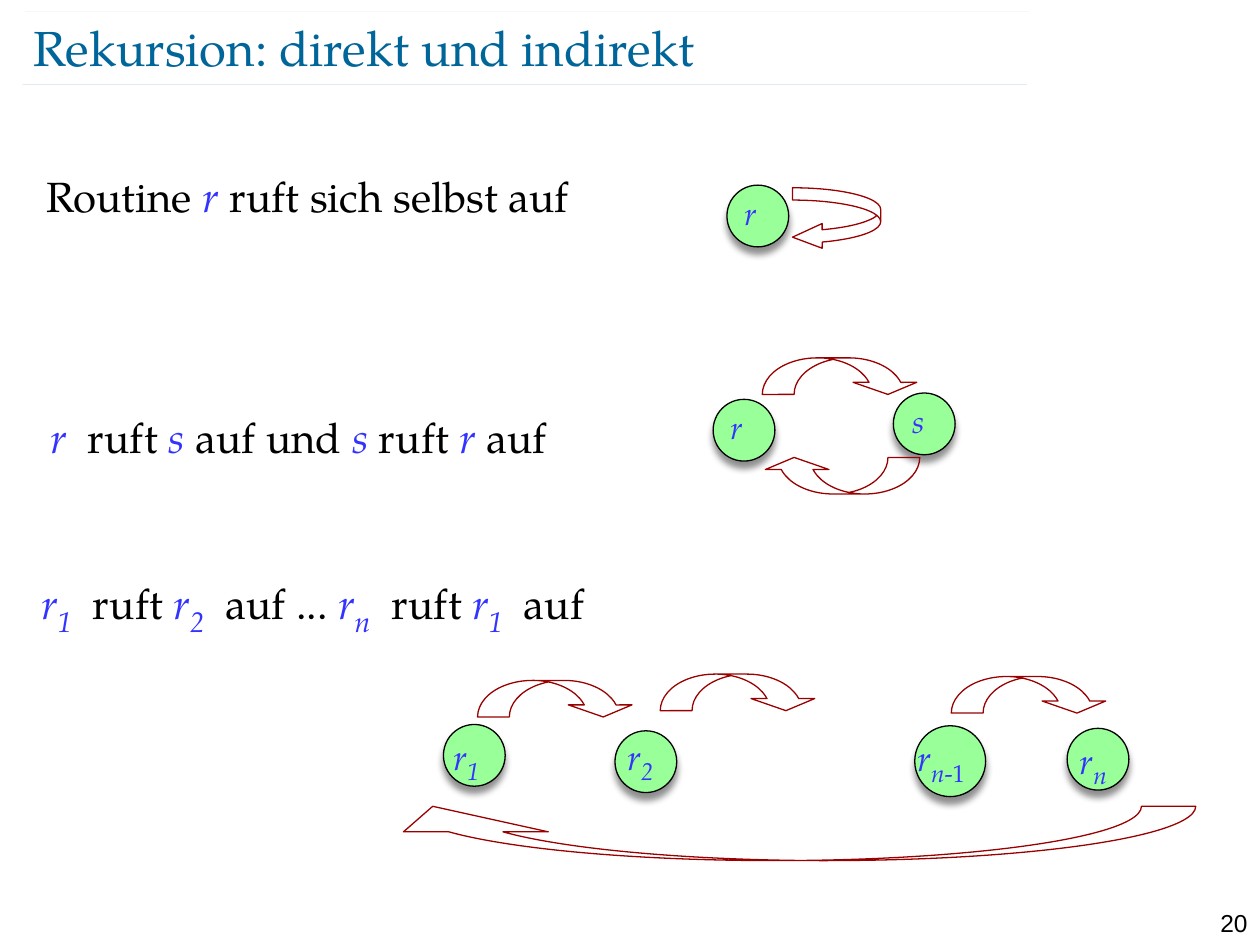
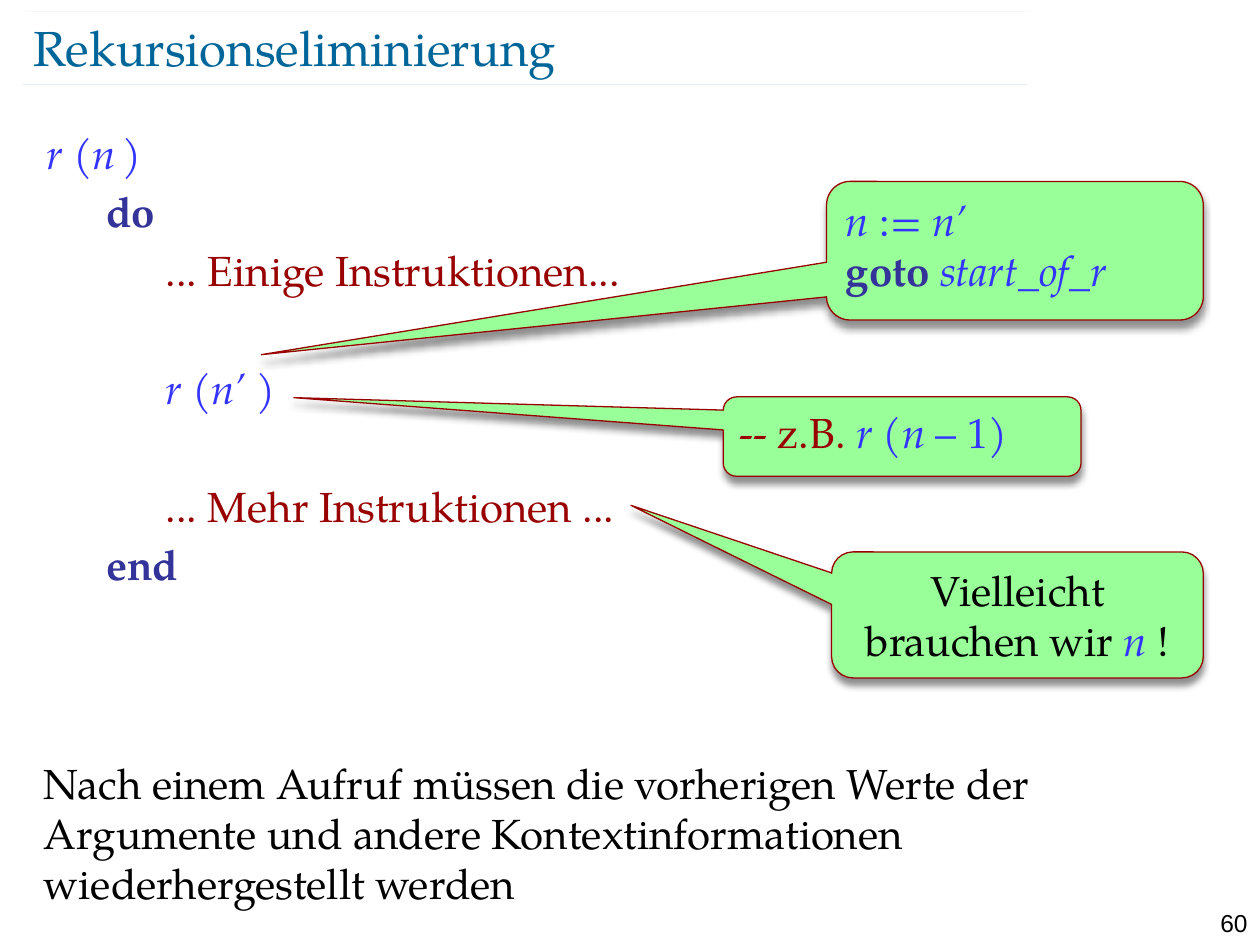
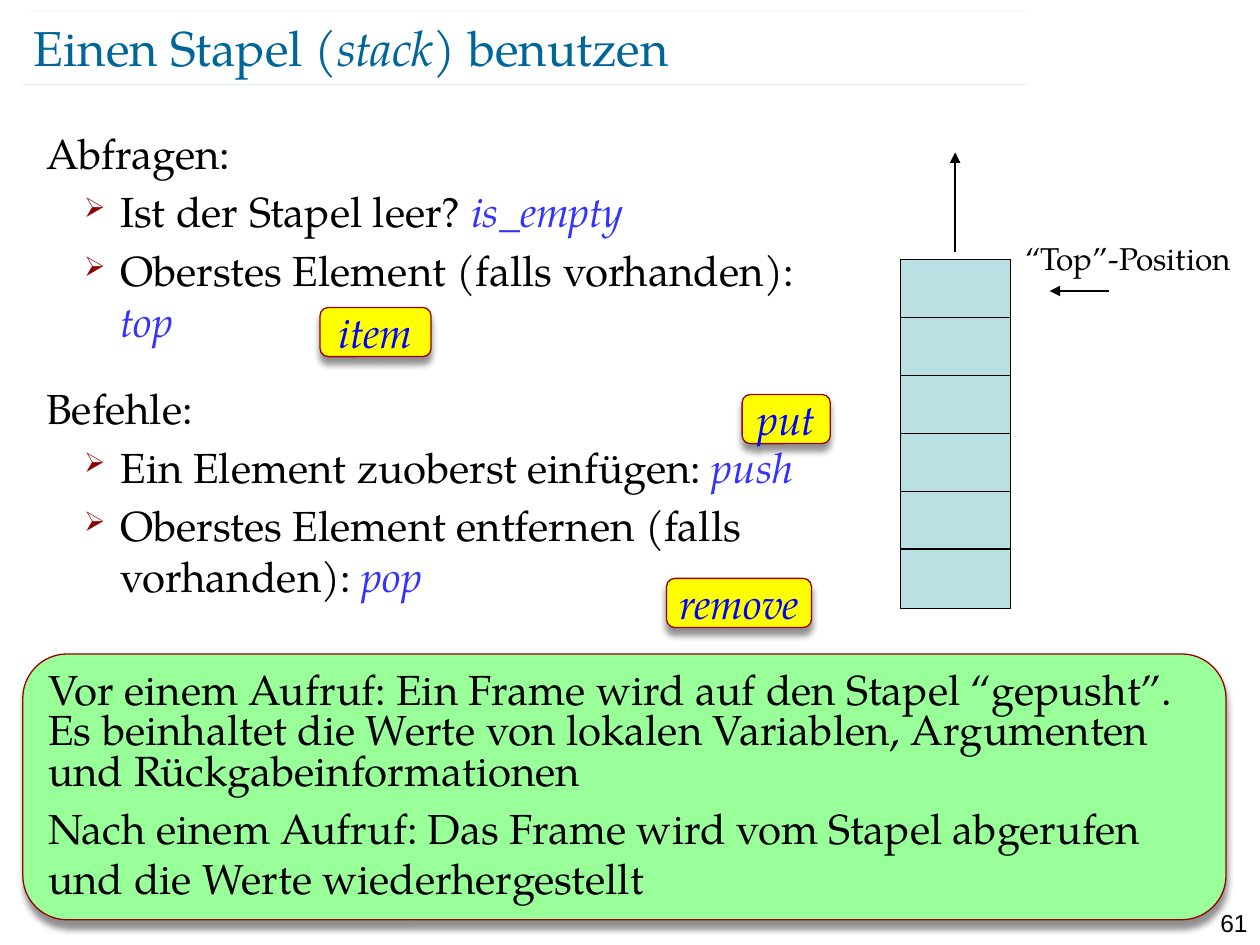
from dataclasses import dataclass, field

from lxml import etree
from pptx import Presentation
from pptx import util as u
from pptx.dml import color
from pptx.enum import shapes, text
from pptx.oxml import ns

# ---- Content: a run is (text, style), a paragraph is a dict, places are points ----

GAP = (" ", "gap")  # widened space between a routine name and its verb

RECURSION = {
    "title": [("Rekursion: direkt und indirekt", "title")],
    "number": 20,
    "statements": [
        ((19.4, 93.6, 365, 43.9),
         [("Routine ", "text"), ("r", "name"), (" ruft sich selbst auf", "text")]),
        ((21.6, 231.8, 362.9, 60.5),
         [("r", "name"), GAP, ("ruft ", "text"), ("s", "name"), (" auf und ", "text"),
          ("s", "name"), (" ruft ", "text"), ("r ", "name"), ("auf", "text")]),
        ((16.6, 322.6, 378.7, 49),
         [("r", "name"), ("1", "index"), GAP, ("ruft ", "text"),
          ("r", "name"), ("2", "index"), GAP, ("auf ... ", "text"),
          ("r", "name"), ("n", "index"), GAP, ("ruft ", "text"),
          ("r", "name"), ("1", "index"), GAP, ("auf", "text")]),
    ],
    # (circle left, top, diameter), (label left, top, width), label size, label
    "routines": [
        ((415.4, 105.8, 35.3), (425.5, 110.9, 18.7), 18, [("r", "name")]),
        ((407.5, 228.2, 35.3), (417.6, 233.3, 18.7), 18, [("r", "name")]),
        ((510.5, 224.6, 35.3), (521.3, 229.7, 18.7), 18, [("s", "name")]),
        ((253.4, 414, 35.3), (259.2, 416.2, 23.8), 20, [("r", "name"), ("1", "index")]),
        ((351.4, 417.6, 35.3), (358.6, 416.2, 23.8), 20, [("r", "name"), ("2", "index")]),
        ((522.7, 414.7, 40.5), (524.2, 416.9, 39.6), 20,
         [("r", "name"), ("n", "index"), ("-1", "index_upright")]),
        ((609.8, 416.2, 35.3), (617, 418.3, 39.6), 20, [("r", "name"), ("n", "index")]),
    ],
    "self_call": (452.9, 107.3, 50.4, 35.3),
    "calls": [(435.6, 204.5), (272.9, 388.8), (543.6, 386.6), (377.3, 385.2)],
    "call_back": (435.6, 261.4),
    "call_to_first": (205.9, 460.8, 477.4, 31),
}

ELIMINATION = {
    "title": [("Rekursionseliminierung", "title")],
    "number": 60,
    "code_box": (19.4, 69.1, 676.8, 444.2),
    "code": [
        {"runs": [("r", "name"), (" (", "code"), ("n", "name"), (" ", "tight"), (")", "code")]},
        {"runs": [("do", "keyword")], "depth": 1},
        {"runs": [("... Einige Instruktionen...", "comment")], "depth": 2},
        {"runs": [("r", "name"), (" (", "code"), ("n’ ", "name"), (")", "code")],
         "depth": 2, "before": 38.5},
        {"runs": [("... Mehr Instruktionen ...", "comment")], "depth": 2, "before": 38.5},
        {"runs": [("end", "keyword")], "depth": 1},
    ],
    # box, pointer tip, alignment, paragraphs
    "callouts": [
        ((475.2, 315.4, 212.4, 72), (-1.04, -0.87), "CENTER",
         [{"runs": [("Vielleicht brauchen wir ", "text"), ("n ", "name"), ("!", "text")]}]),
        ((472.3, 103.7, 215.3, 79.2), (-2, 0.75), "LEFT",
         [{"runs": [("n ", "name"), (":= ", "code"), ("n’", "name")]},
          {"runs": [("goto ", "keyword"), ("start_of_r", "name")], "before": 0}]),
        ((413.3, 226.8, 204.5, 45.4), (-1.7, -0.49), "LEFT",
         [{"runs": [("-- z.B. ", "comment"), ("r ", "name"), ("(", "code"),
                    ("n ", "name"), ("– 1)", "code")]}]),
    ],
    "conclusion_box": (18, 429.1, 686.2, 78.5),
    "conclusion": "Nach einem Aufruf müssen die vorherigen Werte der Argumente und andere "
                  "Kontextinformationen wiederhergestellt werden",
}

STACK = {
    "title": [("Einen Stapel (", "title"), ("stack", "title_italic"), (") benutzen", "title")],
    "number": 61,
    "operations_box": (19.4, 69.1, 444.2, 293),
    "operations": [
        {"runs": [("Abfragen:", "text")]},
        {"runs": [("Ist der Stapel leer? ", "text"), ("is_empty", "name")], "bullet": True},
        {"runs": [("Oberstes Element (falls vorhanden): ", "text"), ("top", "name")],
         "bullet": True},
        {"runs": [("Befehle:", "text")], "before": 21},
        {"runs": [("Ein Element zuoberst einfügen: ", "text"), ("push", "name")],
         "bullet": True},
        {"runs": [("Oberstes Element entfernen (falls vorhanden): ", "text"), ("pop", "name")],
         "bullet": True},
    ],
    "cells": {"left": 514.8, "top": 148.3, "width": 62.6, "height": 33.8,
              "pitch": 33.1, "count": 6},
    "arrows": [(633.6, 166.3, 599.8, 166.3), (545.8, 144, 545.8, 87.1)],
    "top_label": ((578.9, 133.2, 139, 28.8), "“Top”-Position"),
    "frame_box": (13, 373.7, 687.6, 151.9),
    "frame_notes": [
        {"runs": [("Vor einem Aufruf: Ein Frame wird auf den Stapel “gepusht”. Es beinhaltet "
                   "die Werte von lokalen Variablen, Argumenten und Rückgabeinformationen",
                   "text")], "line_spacing": 0.8},
        {"runs": [("Nach einem Aufruf: Das Frame wird vom Stapel abgerufen und die Werte "
                   "wiederhergestellt", "text")]},
    ],
    "tags": [
        ((182.9, 175.7, 63.4, 28.1), "item"),
        ((424.1, 225.4, 50.4, 28.1), "put"),
        ((380.9, 330.5, 82.8, 28.1), "remove"),
    ],
}


# ---- Theme ----

@dataclass(frozen=True)
class Theme:
    font: str = "TeX Gyre Pagella"
    number_font: str = "Arial"
    title_size: float = 28
    body_size: float = 24
    label_size: float = 18
    number_size: float = 14
    accent: str = "006699"
    black: str = "000000"
    green: str = "99FF99"
    yellow: str = "FFFF00"
    cell: str = "BBE0E3"
    red: str = "990000"
    bullet: str = "8B0000"
    line: float = 0.75
    before: float = 4.8
    depth: float = 34.2
    bullet_indent: tuple = (42.5, -20.9)
    arrow_size: tuple = (90, 20.9)
    # style: colour, italic, bold, size change
    styles: dict = field(default_factory=lambda: {
        "text": ("000000", False, False, 0),
        "gap": ("000000", False, False, 0),
        "number": ("000000", False, False, 0),
        "name": ("3333FF", True, False, 0),
        "code": ("3333FF", False, False, 0),
        "tight": ("3333FF", True, False, -8),
        "index": ("3333FF", True, False, 4),
        "index_upright": ("3333FF", False, False, 4),
        "keyword": ("333399", False, True, 0),
        "comment": ("990000", False, False, 0),
        "tag": ("0000FF", True, False, 0),
        "title": ("006699", False, False, 0),
        "title_italic": ("006699", True, False, 0),
    })


THEME = Theme()
SHAPE = shapes.MSO_SHAPE
ALIGN = text.PP_ALIGN
ANCHOR = text.MSO_ANCHOR


# ---- Text ----

def points(values):
    return [u.Pt(value) for value in values]


def add_child(parent, tag, **attributes):
    return etree.SubElement(parent, ns.qn(tag), attributes)


def add_bullet(paragraph):
    properties = paragraph._p.get_or_add_pPr()
    left, hanging = points(THEME.bullet_indent)
    properties.set("marL", str(left))
    properties.set("indent", str(hanging))
    add_child(add_child(properties, "a:buClr"), "a:srgbClr", val=THEME.bullet)
    add_child(properties, "a:buSzPct", val="65000")
    add_child(properties, "a:buChar", char="➢")


def add_styled_run(paragraph, words, style, size):
    run = paragraph.add_run()
    run.text = words
    rgb, italic, bold, change = THEME.styles[style]
    font = run.font
    font.name = THEME.number_font if style == "number" else THEME.font
    font.size = u.Pt(size + change)
    font.italic, font.bold = italic, bold
    font.color.rgb = color.RGBColor.from_string(rgb)
    properties = run._r.get_or_add_rPr()
    if style.startswith("index"):
        properties.set("baseline", "-25000")
    if style == "gap":
        properties.set("spc", "600")


def write(frame, paragraphs, size=THEME.body_size, align=ALIGN.LEFT, anchor=ANCHOR.TOP,
          inset=True, wrap=True):
    frame.word_wrap = wrap
    frame.vertical_anchor = anchor
    if not inset:
        frame.margin_left = frame.margin_top = frame.margin_right = frame.margin_bottom = 0
    for position, content in enumerate(paragraphs):
        paragraph = frame.add_paragraph() if position else frame.paragraphs[0]
        if content.get("bullet"):
            paragraph.level = 1
            add_bullet(paragraph)
        if content.get("depth"):
            indent = u.Pt(THEME.depth * content["depth"])
            paragraph._p.get_or_add_pPr().set("marL", str(indent))
        paragraph.alignment = align
        paragraph.line_spacing = content.get("line_spacing")
        paragraph.space_before = u.Pt(content.get("before", THEME.before) if position else 0)
        for words, style in content["runs"]:
            add_styled_run(paragraph, words, style, size)


def add_text(slide, box, paragraphs, **options):
    write(slide.shapes.add_textbox(*points(box)).text_frame, paragraphs, **options)


# ---- Shapes and lines ----

def add_preset(slide, kind, box, line, fill=None, shadow=False, adjustments=(), flip=False):
    shape = slide.shapes.add_shape(kind, *points(box))
    shape.shadow.inherit = False
    if fill:
        shape.fill.solid()
        shape.fill.fore_color.rgb = color.RGBColor.from_string(fill)
    else:
        shape.fill.background()
    shape.line.color.rgb = color.RGBColor.from_string(line)
    shape.line.width = u.Pt(THEME.line)
    for position, value in enumerate(adjustments):
        shape.adjustments[position] = value
    properties = shape._element.spPr
    if shadow:
        outer = add_child(properties.find(ns.qn("a:effectLst")), "a:outerShdw",
                          blurRad=str(u.Pt(4)), dist=str(u.Pt(4)), dir="5400000",
                          algn="ctr", rotWithShape="0")
        shade = add_child(outer, "a:srgbClr", val=THEME.black)
        add_child(shade, "a:alpha", val="43000")
    if flip:
        properties.xfrm.set("flipH", "1")
        properties.xfrm.set("flipV", "1")
    return shape


def add_line(slide, ends, rgb, width):
    connector = slide.shapes.add_connector(shapes.MSO_CONNECTOR.STRAIGHT, *points(ends))
    connector.line.color.rgb = color.RGBColor.from_string(rgb)
    connector.line.width = u.Pt(width)
    add_child(connector._element.spPr, "a:effectLst")
    return connector.line.get_or_change_to_ln()if hasattr(connector.line, "get_or_change_to_ln") \
        else connector.get_or_add_ln()


def add_curved_arrow(slide, box, adjustments=(0.87, 1.74, 0.33), flip=False):
    add_preset(slide, SHAPE.CURVED_DOWN_ARROW, box, THEME.red,
               adjustments=adjustments, flip=flip)


# ---- Slides ----

def start_slide(presentation, content):
    slide = presentation.slides.add_slide(presentation.slide_layouts[6])
    add_text(slide, (680.4, 515.5, 39.6, 17.3),
             [{"runs": [(str(content["number"]), "number")]}],
             size=THEME.number_size, align=ALIGN.RIGHT)
    # Thin rules above and below the title
    for left, top in ((13, 48.2), (14.4, 6.5)):
        outline = add_line(slide, (left, top, left + 573.8, top), THEME.accent, 0.1)
        add_child(outline.find(".//" + ns.qn("a:srgbClr")), "a:alpha", val="35000")
    add_text(slide, (19.4, 9.4, 625.7, 34.6), [{"runs": content["title"]}],
             size=THEME.title_size, anchor=ANCHOR.MIDDLE, inset=False)
    return slide


def build_recursion(presentation, content):
    slide = start_slide(presentation, content)
    for box, runs in content["statements"]:
        add_text(slide, box, [{"runs": runs}])
    # Routines and their labels
    for (left, top, diameter), label_place, size, runs in content["routines"]:
        add_preset(slide, SHAPE.OVAL, (left, top, diameter, diameter), THEME.black,
                   THEME.green, shadow=True)
        add_text(slide, (*label_place, 25.9), [{"runs": runs}], size=size, inset=False)
    # Calls
    add_preset(slide, SHAPE.CURVED_LEFT_ARROW, content["self_call"], THEME.red,
               adjustments=(0.2, 0.4, 0.48))
    for place in content["calls"]:
        add_curved_arrow(slide, (*place, *THEME.arrow_size))
    add_curved_arrow(slide, (*content["call_back"], *THEME.arrow_size), flip=True)
    add_curved_arrow(slide, content["call_to_first"], (5.06, 2.67, 0.47), flip=True)


def build_elimination(presentation, content):
    slide = start_slide(presentation, content)
    add_text(slide, content["code_box"], content["code"])
    for box, tip, align, paragraphs in content["callouts"]:
        callout = add_preset(slide, SHAPE.ROUNDED_RECTANGULAR_CALLOUT, box, THEME.red,
                             THEME.green, shadow=True, adjustments=(*tip, 0.17))
        write(callout.text_frame, paragraphs, align=ALIGN[align])
    add_text(slide, content["conclusion_box"], [{"runs": [(content["conclusion"], "text")]}])


def build_stack(presentation, content):
    slide = start_slide(presentation, content)
    add_text(slide, content["operations_box"], content["operations"])
    # Stack cells
    cells = content["cells"]
    for row in range(cells["count"]):
        top = cells["top"] + row * cells["pitch"]
        add_preset(slide, SHAPE.RECTANGLE,
                   (cells["left"], top, cells["width"], cells["height"]),
                   THEME.black, THEME.cell)
    # Growth and top-position arrows
    for ends in content["arrows"]:
        add_child(add_line(slide, ends, THEME.black, THEME.line), "a:tailEnd", type="triangle")
    box, label = content["top_label"]
    add_text(slide, box, [{"runs": [(label, "text")]}], size=THEME.label_size)
    # Frame notes and feature tags
    notes = add_preset(slide, SHAPE.ROUNDED_RECTANGLE, content["frame_box"], THEME.red,
                       THEME.green, shadow=True)
    write(notes.text_frame, content["frame_notes"])
    for box, name in content["tags"]:
        tag = add_preset(slide, SHAPE.ROUNDED_RECTANGLE, box, THEME.red, THEME.yellow,
                         shadow=True)
        write(tag.text_frame, [{"runs": [(name, "tag")]}], align=ALIGN.CENTER,
              anchor=ANCHOR.MIDDLE, wrap=False)


def main():
    presentation = Presentation()
    presentation.slide_width, presentation.slide_height = points((720, 540))
    build_recursion(presentation, RECURSION)
    build_elimination(presentation, ELIMINATION)
    build_stack(presentation, STACK)
    presentation.save("out.pptx")


if __name__ == "__main__":
    main()
